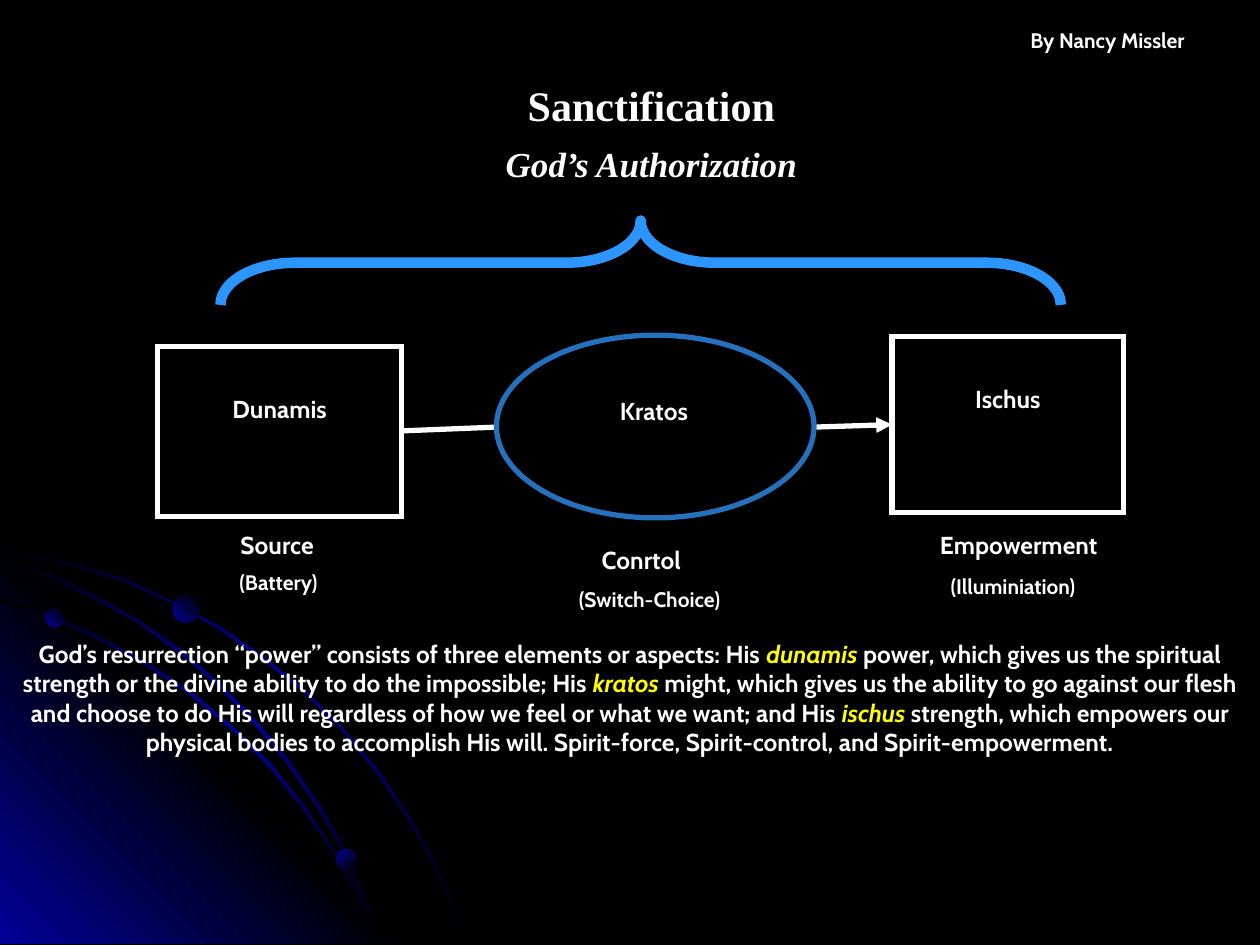
"""Build a diagram slide about three aspects of power."""
from copy import deepcopy

from lxml import etree
from pptx import Presentation, util as u
from pptx.dml.color import RGBColor
from pptx.enum import shapes, text
from pptx.oxml.ns import qn

PX = 9144
WHITE, YELLOW, BLUE, BLACK = "FFFFFF", "FFFF00", "010199", "000000"
GLOW = (BLACK, BLUE, BLACK)
OUTER_ARC = [
    (57, 447), (28, 441), (0, 435), (0, 438), (28, 443), (56, 449), (97, 461),
    (135, 478), (173, 499), (208, 523), (241, 549), (271, 579), (298, 612),
    (323, 649), (337, 673), (350, 698), (360, 723), (370, 749), (372, 749),
    (362, 723), (352, 698), (339, 673), (325, 648), (300, 611), (272, 578),
    (242, 548), (209, 521), (174, 497), (136, 477), (98, 459)]
CORNER = [(322, 749), (0, 749), (0, 427)]
INNER_ARC = [
    (285, 714), (294, 732), (301, 749), (303, 749), (296, 730), (286, 712),
    (266, 676), (242, 640), (215, 606), (184, 576), (152, 549), (117, 526),
    (79, 505), (41, 488), (0, 475), (0, 477), (39, 490), (77, 507), (115, 528),
    (150, 551), (183, 578), (213, 608), (240, 641), (265, 677)]
MIDDLE_ARC = [
    (0, 442), (0, 444), (36, 457), (74, 475), (109, 494), (142, 518),
    (173, 544), (202, 575), (227, 605), (252, 641), (267, 667), (280, 694),
    (292, 722), (301, 749), (303, 749), (294, 720), (282, 693), (269, 665),
    (254, 639), (229, 603), (204, 573), (175, 543), (144, 516), (111, 493),
    (76, 473), (39, 455)]


def rgb(value):
    return RGBColor.from_string(value)


def write(box, *spans, size=14, font="Cabin", italic=False,
          align=text.PP_ALIGN.CENTER, top=5):
    frame = box.text_frame
    frame.word_wrap = True
    frame.vertical_anchor = text.MSO_ANCHOR.TOP
    frame.margin_top = top * PX
    para = frame.paragraphs[0]
    para.alignment = align
    for index, words in enumerate(spans):
        marked = index % 2 == 1
        span = para.add_run()
        span.text = words
        span.font.name, span.font.size = font, u.Pt(size)
        span.font.bold, span.font.italic = True, italic or marked
        span.font.color.rgb = rgb(YELLOW if marked else WHITE)


class Painter:
    """Draws styled elements on the current slide."""

    def __init__(self, page):
        self.page = page
        self.shapes = page.shapes

    def gradient(self, shape, colors, angle):
        shape.shadow.inherit = False
        shape.line.fill.background()
        shape.fill.gradient()
        shape.fill.gradient_angle = angle
        stops = shape._element.spPr.find(".//" + qn("a:gsLst"))
        for _ in colors[2:]:
            stops.append(deepcopy(stops[-1]))
        for index, (stop, color) in enumerate(zip(shape.fill.gradient_stops, colors)):
            stop.position = index / (len(colors) - 1)
            stop.color.rgb = rgb(color)

    def outline(self, points, colors=GLOW, angle=315):
        builder = self.shapes.build_freeform(*points[0], scale=PX)
        builder.add_line_segments(points[1:], close=True)
        self.gradient(builder.convert_to_shape(), colors, angle)

    def dot(self, left, top, size, angle):
        shape = self.shapes.add_shape(
            shapes.MSO_SHAPE.OVAL, *(n * PX for n in (left, top, size, size)))
        self.gradient(shape, (BLUE, BLACK), angle)

    def frame(self, kind, *place, color=WHITE, width=3):
        shape = self.shapes.add_shape(kind, *(n * PX for n in place))
        shape.shadow.inherit = False
        shape.fill.background()
        shape.line.color.rgb = rgb(color)
        shape.line.width = u.Pt(width)
        return shape

    def square_frame(self, *place):
        shape = self.frame(shapes.MSO_SHAPE.RECTANGLE, *place)
        etree.SubElement(shape.line._get_or_add_ln(), qn("a:miter"), lim="800000")
        return shape

    def label(self, place, *spans, **style):
        write(self.shapes.add_textbox(*(n * PX for n in place)), *spans, **style)

    def link(self, *ends, arrow=False):
        line = self.shapes.add_connector(
            shapes.MSO_CONNECTOR.STRAIGHT, *(n * PX for n in ends))
        line.line.color.rgb = rgb(WHITE)
        line.line.width = u.Pt(3)
        if arrow:
            etree.SubElement(line.line._get_or_add_ln(), qn("a:tailEnd"), type="triangle")
        etree.SubElement(line._element.spPr, qn("a:effectLst"))


def main():
    deck = Presentation()
    deck.slide_width, deck.slide_height = 1000 * PX, 750 * PX
    page = deck.slides.add_slide(deck.slide_layouts[6])
    page.background.fill.solid()
    page.background.fill.fore_color.rgb = rgb(BLACK)
    paint = Painter(page)
    kinds = shapes.MSO_SHAPE

    paint.outline(OUTER_ARC)
    paint.outline(CORNER, (BLUE, BLACK, BLUE), 45)
    paint.outline(INNER_ARC)
    paint.outline(MIDDLE_ARC)
    paint.dot(36, 483, 15, 45)
    paint.dot(267, 674, 16, 315)
    paint.dot(137, 473, 21, 45)

    paint.label((808, 17, 167, 30), "By Nancy Missler", size=12,
                align=text.PP_ALIGN.LEFT)
    paint.label((342, 58, 350, 51), "Sanctification", size=24, font="Times New Roman")
    paint.label((317, 108, 400, 44), "God’s Authorization", size=20,
                font="Times New Roman", italic=True)

    brace = paint.frame(kinds.RIGHT_BRACE, 475, -125, 67, 667, color="2D96FE", width=6)
    brace.rotation = 270
    brace.adjustments[0], brace.adjustments[1] = 0.88, 0.5

    paint.link(394, 339, 319, 342)
    paint.link(646, 339, 708, 337, arrow=True)
    write(paint.square_frame(125, 275, 194, 135), "Dunamis", top=38)
    paint.frame(kinds.OVAL, 394, 266, 252, 145, color="2671BD")
    paint.label((388, 309, 262, 34), "Kratos")
    write(paint.square_frame(708, 267, 184, 140), "Ischus", top=38)

    paint.label((145, 416, 150, 34), "Source")
    paint.label((434, 428, 150, 34), "Conrtol")
    paint.label((675, 416, 267, 33), "Empowerment")
    paint.label((92, 447, 258, 30), "(Battery)", size=12)
    paint.label((356, 461, 319, 30), "(Switch-Choice)", size=12)
    paint.label((675, 450, 258, 30), "(Illuminiation)", size=12)

    paint.label(
        (7, 502, 986, 128),
        "God’s resurrection “power” consists of three elements or aspects: His ",
        "dunamis",
        " power, which gives us the spiritual strength or the divine ability to do "
        "the impossible; His ",
        "kratos",
        " might, which gives us the ability to go against our flesh and choose to do "
        "His will regardless of how we feel or what we want; and His ",
        "ischus",
        " strength, which empowers our physical bodies to accomplish His will. "
        "Spirit-force, Spirit-control, and Spirit-empowerment.")
    deck.save("out.pptx")


if __name__ == "__main__":
    main()
